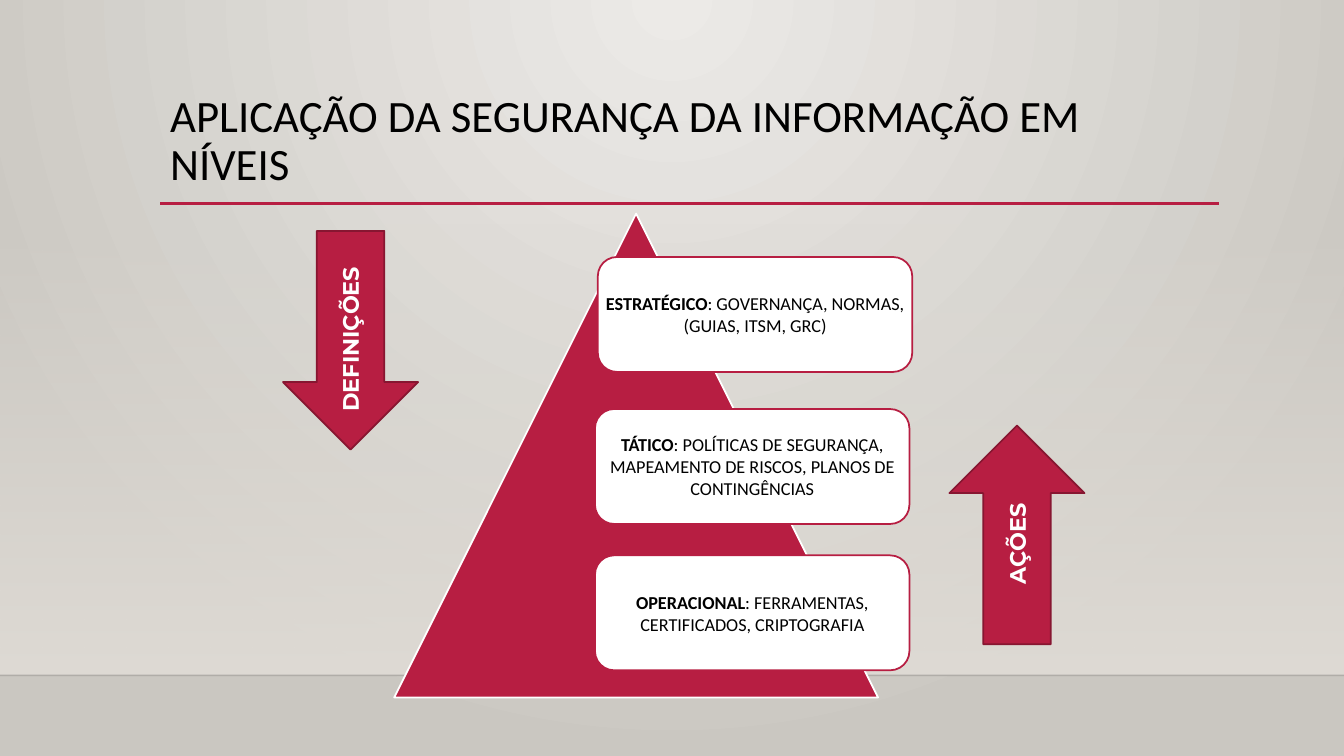
from dataclasses import dataclass

import lxml.etree
import pptx
import pptx.dml.color
import pptx.enum.shapes
import pptx.enum.text
import pptx.oxml.ns
import pptx.util

Pt = pptx.util.Pt
qn = pptx.oxml.ns.qn
SHAPE = pptx.enum.shapes.MSO_SHAPE
ALIGN = pptx.enum.text.PP_ALIGN
ANCHOR = pptx.enum.text.MSO_ANCHOR

COLORS = {
    "red": "B71E42",
    "dark_red": "871631",
    "white": "FFFFFF",
    "black": "000000",
    "glow": "ECEAE7",
    "edge": "CAC7C1",
    "wall": "DFDBD5",
}


@dataclass
class Level:
    name: str
    detail: str
    left: float
    top: float


@dataclass
class Arrow:
    label: str
    kind: int
    left: float
    top: float
    label_box: tuple[float, float, float, float]


LEVELS = [
    Level("ESTRATÉGICO", ": GOVERNANÇA, NORMAS, (GUIAS, ITSM, GRC)", 427, 183.6),
    Level("TÁTICO", ": POLÍTICAS DE SEGURANÇA, MAPEAMENTO DE RISCOS, "
          "PLANOS DE CONTINGÊNCIAS", 425, 292.2),
    Level("OPERACIONAL", ": FERRAMENTAS, CERTIFICADOS, CRIPTOGRAFIA", 425, 396.7),
]
ARROWS = [
    Arrow("DEFINIÇÕES", SHAPE.DOWN_ARROW, 202.2, 165, (185, 222.5, 130.3, 26.6)),
    Arrow("AÇÕES", SHAPE.UP_ARROW, 678.2, 304, (680.4, 365, 92.2, 26.6)),
]


def rgb(name: str) -> pptx.dml.color.RGBColor:
    return pptx.dml.color.RGBColor.from_string(COLORS[name])


def set_alpha(parent, percent: int) -> None:
    """Set the opacity of the first colour found under parent."""
    color = next(parent.iter(qn("a:srgbClr")))
    lxml.etree.SubElement(color, qn("a:alpha"), val=str(percent * 1000))


def set_gradient(fill, start: str, end: str) -> None:
    fill.gradient()
    for stop, name in zip(fill.gradient_stops, (start, end)):
        stop.color.rgb = rgb(name)


def add_shape(s, kind: int, left: float, top: float, width: float, height: float,
              fill: str, line: str):
    sp = s.shapes.add_shape(kind, Pt(left), Pt(top), Pt(width), Pt(height))
    sp.shadow.inherit = False
    sp.fill.solid()
    sp.fill.fore_color.rgb = rgb(fill)
    sp.line.color.rgb = rgb(line)
    sp.line.width = Pt(1.25)
    return sp


def add_rule(s, left: float, right: float, y: float, color: str, width: float):
    rule = s.shapes.add_connector(pptx.enum.shapes.MSO_CONNECTOR.STRAIGHT,
                                  Pt(left), Pt(y), Pt(right), Pt(y))
    rule.line.color.rgb = rgb(color)
    rule.line.width = Pt(width)
    lxml.etree.SubElement(rule.element.spPr, qn("a:effectLst"))
    return rule


def format_run(r, size: float, font: str, color: str, bold: bool = False) -> None:
    r.font.size = Pt(size)
    r.font.name = font
    r.font.bold = bold
    r.font.color.rgb = rgb(color)


def add_text(s, text: str, box: tuple[float, float, float, float], size: float,
             font: str, color: str, bold: bool = False):
    sp = s.shapes.add_textbox(*map(Pt, box))
    tf = sp.text_frame
    tf.word_wrap = True
    tf.text = text
    format_run(tf.paragraphs[0].runs[0], size, font, color, bold)
    return sp


def add_level(s, level: Level) -> None:
    sp = add_shape(s, SHAPE.ROUNDED_RECTANGLE, level.left, level.top, 224.6, 82.1,
                   "white", "red")
    tf = sp.text_frame
    tf.word_wrap = True
    tf.vertical_anchor = ANCHOR.MIDDLE
    tf.margin_left = tf.margin_right = tf.margin_top = tf.margin_bottom = 0
    p = tf.paragraphs[0]
    p.alignment = ALIGN.CENTER
    for text, bold in ((level.name, True), (level.detail, False)):
        r = p.add_run()
        r.text = text
        format_run(r, 13, "Calibri", "black", bold)


def add_arrow(s, arrow: Arrow) -> None:
    add_shape(s, arrow.kind, arrow.left, arrow.top, 96.5, 156.2, "red", "dark_red")
    label = add_text(s, arrow.label, arrow.label_box, 16, "Montserrat", "white", True)
    label.rotation = 270


def add_backdrop(s) -> None:
    # Radial glow from the top centre
    set_gradient(s.background.fill, "glow", "edge")
    grad = next(s.element.iter(qn("a:gradFill")))
    radial = lxml.etree.Element(qn("a:path"), {"path": "circle"})
    lxml.etree.SubElement(radial, qn("a:fillToRect"),
                          l="43000", t="0", r="43000", b="100000")
    grad.replace(grad.find(qn("a:lin")), radial)

    # Wall fading in towards the floor line
    wall = add_shape(s, SHAPE.RECTANGLE, 0, 159, 960, 323.4, "wall", "wall")
    wall.line.fill.background()
    set_gradient(wall.fill, "wall", "wall")
    wall.fill.gradient_angle = 270
    set_alpha(wall.element.spPr, 0)
    floor = add_rule(s, 0, 960, 482.4, "black", 1)
    set_alpha(floor.element.spPr, 20)


def main() -> None:
    prs = pptx.Presentation()
    prs.slide_width, prs.slide_height = Pt(960), Pt(540)
    s = prs.slides.add_slide(prs.slide_layouts[6])
    add_backdrop(s)

    # Title and its underline
    add_rule(s, 114.5, 871, 145.4, "red", 2.5)
    title = add_text(s, "APLICAÇÃO DA SEGURANÇA DA INFORMAÇÃO EM NÍVEIS",
                     (114.5, 63.4, 756, 82.8), 32, "Calibri", "black")
    title.text_frame.paragraphs[0].line_spacing = 0.9

    # Pyramid with its levels
    add_shape(s, SHAPE.ISOSCELES_TRIANGLE, 281.6, 152.6, 345.6, 345.6, "red", "white")
    for level in LEVELS:
        add_level(s, level)

    # Direction arrows
    for arrow in ARROWS:
        add_arrow(s, arrow)

    prs.save("out.pptx")


if __name__ == "__main__":
    main()
